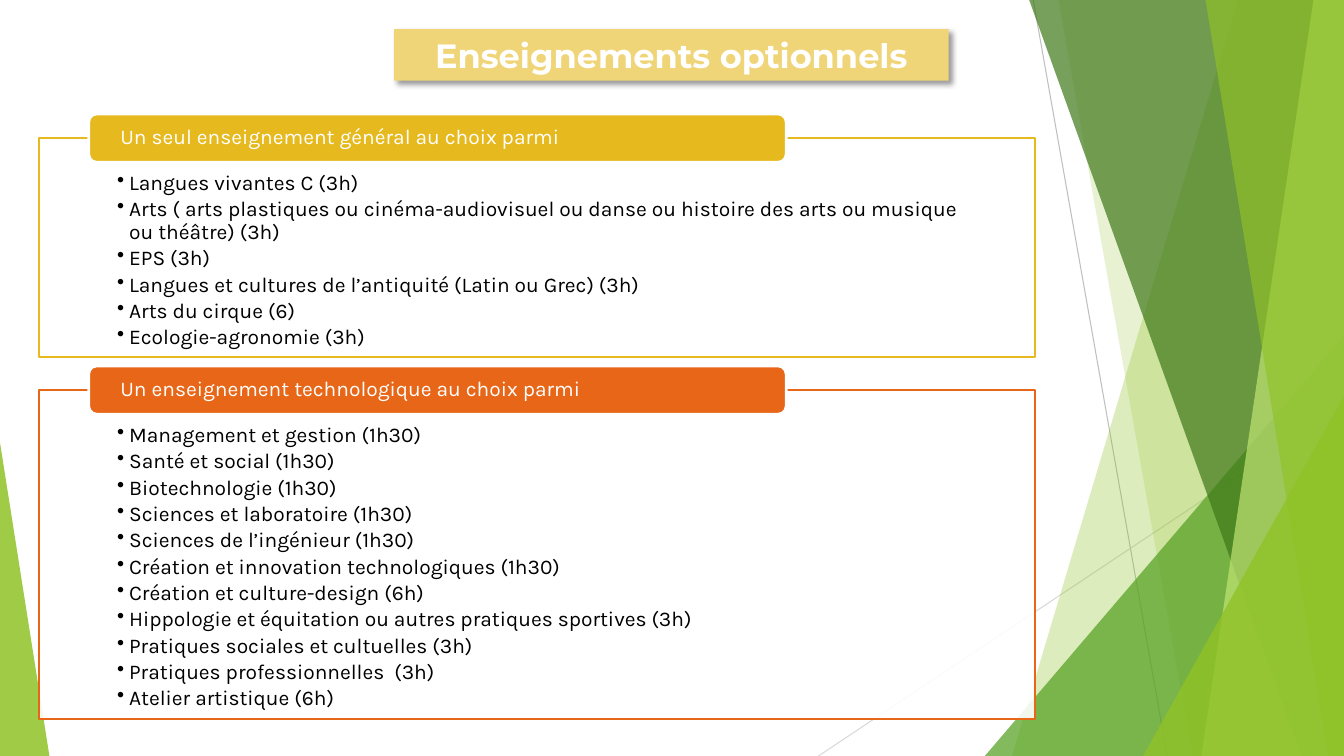
from dataclasses import dataclass
from itertools import cycle

from lxml.etree import SubElement
from pptx import Presentation
from pptx.dml.color import RGBColor
from pptx.enum.shapes import MSO_CONNECTOR, MSO_SHAPE
from pptx.enum.text import MSO_ANCHOR, PP_ALIGN
from pptx.oxml.ns import qn
from pptx.util import Emu, Inches, Pt


@dataclass(frozen=True)
class Theme:
    white: str = "FFFFFF"
    black: str = "000000"
    lime: str = "90C226"
    pale_lime: str = "C0E474"
    green: str = "54A021"
    forest: str = "3F7819"
    light_grey: str = "D9D9D9"
    grey: str = "BFBFBF"
    gold: str = "E6B91E"
    sand: str = "F0D578"
    orange: str = "E76618"
    body_font: str = "Karla"
    title_font: str = "Montserrat"
    body_size: Pt = Pt(15)
    title_size: Pt = Pt(24)


theme = Theme()
presentation = Presentation()
presentation.slide_width = Inches(40 / 3)
presentation.slide_height = Inches(7.5)
column = presentation.slide_width / 100
row = presentation.slide_height / 100
slide = presentation.slides.add_slide(presentation.slide_layouts[6])
shapes = slide.shapes


def grid(*shares):
    return [Emu(round(share * unit)) for share, unit in zip(shares, cycle((column, row)))]


def paint(shape, color, opacity=100, outline=None, weight=0):
    shape.shadow.inherit = False
    shape.fill.solid()
    shape.fill.fore_color.rgb = RGBColor.from_string(color)
    if opacity < 100:
        tint = shape.element.spPr.find(qn("a:solidFill"))[0]
        SubElement(tint, qn("a:alpha"), val=str(opacity * 1000))
    if outline:
        shape.line.color.rgb = RGBColor.from_string(outline)
        shape.line.width = Pt(weight)
    else:
        shape.line.fill.background()


for ends, color in [
    ((76.88, 0, 86.85, 100), theme.grey),
    ((100, 53.73, 60.9, 100), theme.light_grey),
]:
    ray = shapes.add_connector(MSO_CONNECTOR.STRAIGHT, *grid(*ends))
    ray.line.color.rgb = RGBColor.from_string(color)
    ray.line.width = Pt(0.75)
    SubElement(ray.element.spPr, qn("a:effectLst"))

facets = [
    ("band", (92.1, 75.3), theme.lime, 30),
    ("band", (78.75, 88.73), theme.lime, 20),
    ("peak right", (73.28, 44.4, 26.72, 55.6), theme.green, 72),
    ("band", (76.58, 96.83), theme.forest, 70),
    ("band", (97.73, 89.4), theme.pale_lime, 70),
    ("band", (89.7, 98.85), theme.lime, 65),
    ("peak right", (85.05, 52.4, 14.95, 47.6), theme.lime, 80),
    ("peak left", (0, 58.53, 3.68, 41.47), theme.lime, 85),
]
for form, extent, color, opacity in facets:
    if form == "band":
        top, bottom = extent
        outline = shapes.build_freeform(*grid(top, 0))
        corners = [(100, 0), (100, 100), (bottom, 100)]
        outline.add_line_segments([grid(*corner) for corner in corners], close=True)
        facet = outline.convert_to_shape()
    else:
        facet = shapes.add_shape(MSO_SHAPE.ISOSCELES_TRIANGLE, *grid(*extent))
        facet.adjustments[0] = 1 if form == "peak right" else 0
    paint(facet, color, opacity)

sections = [
    (18.27, 28.93, theme.gold, "Un seul enseignement général au choix parmi", [
        "Langues vivantes C (3h)",
        "Arts ( arts plastiques ou cinéma-audiovisuel ou danse ou histoire des arts ou musique ou théâtre) (3h)",
        "EPS (3h)",
        "Langues et cultures de l’antiquité (Latin ou Grec) (3h)",
        "Arts du cirque (6)",
        "Ecologie-agronomie (3h)",
    ]),
    (51.6, 43.47, theme.orange, "Un enseignement technologique au choix parmi", [
        "Management et gestion (1h30)",
        "Santé et social (1h30)",
        "Biotechnologie (1h30)",
        "Sciences et laboratoire (1h30)",
        "Sciences de l’ingénieur (1h30)",
        "Création et innovation technologiques (1h30)",
        "Création et culture-design (6h)",
        "Hippologie et équitation ou autres pratiques sportives (3h)",
        "Pratiques sociales et cultuelles (3h)",
        "Pratiques professionnelles  (3h)",
        "Atelier artistique (6h)",
    ]),
]
hanging = Inches(0.12)
header_height = 6.4
for top, height, color, heading, options in sections:
    panel = shapes.add_shape(MSO_SHAPE.RECTANGLE, *grid(2.93, top, 74.1, height))
    paint(panel, theme.white, 90, color, 1.5)
    body = panel.text_frame
    body.word_wrap = True
    body.vertical_anchor = MSO_ANCHOR.TOP
    body.margin_left, body.margin_top, body.margin_right, body.margin_bottom = grid(5.78, 4.53, 5.78, 1.6)
    body.text = "\n".join(options)
    for option in body.paragraphs:
        properties = option._p.get_or_add_pPr()
        properties.set("marL", str(hanging))
        properties.set("indent", str(-hanging))
        SubElement(properties, qn("a:buChar"), char="•")
        option.alignment = PP_ALIGN.LEFT
        option.line_spacing = 0.9
        option.space_after = Pt(2.6)
        option.font.name = theme.body_font
        option.font.size = theme.body_size
        option.font.color.rgb = RGBColor.from_string(theme.black)

    header = shapes.add_shape(
        MSO_SHAPE.ROUNDED_RECTANGLE, *grid(6.6, top - header_height / 2, 51.9, header_height))
    paint(header, color, 100, theme.white, 2)
    label = header.text_frame
    label.word_wrap = True
    label.vertical_anchor = MSO_ANCHOR.MIDDLE
    label.margin_left = label.margin_right = Inches(0.29)
    label.margin_top = label.margin_bottom = 0
    label.text = heading
    line = label.paragraphs[0]
    line.alignment = PP_ALIGN.LEFT
    line.line_spacing = 0.9
    line.font.name = theme.body_font
    line.font.size = theme.body_size
    line.font.color.rgb = RGBColor.from_string(theme.white)

banner = shapes.add_shape(MSO_SHAPE.RECTANGLE, *grid(29.33, 3.87, 41.25, 6.8))
paint(banner, theme.sand)
shadow = SubElement(
    banner.element.spPr.find(qn("a:effectLst")), qn("a:outerShdw"),
    blurRad=str(Pt(4)), dist=str(Pt(3)), dir=str(45 * 60000), algn="tl", rotWithShape="0")
shade = SubElement(shadow, qn("a:srgbClr"), val=theme.black)
SubElement(shade, qn("a:alpha"), val="40000")
banner.text_frame.word_wrap = True
banner.text_frame.text = "Enseignements optionnels"
title = banner.text_frame.paragraphs[0]
title.alignment = PP_ALIGN.CENTER
title.font.name = theme.title_font
title.font.size = theme.title_size
title.font.bold = True
title.font.color.rgb = RGBColor.from_string(theme.white)

presentation.save("out.pptx")
